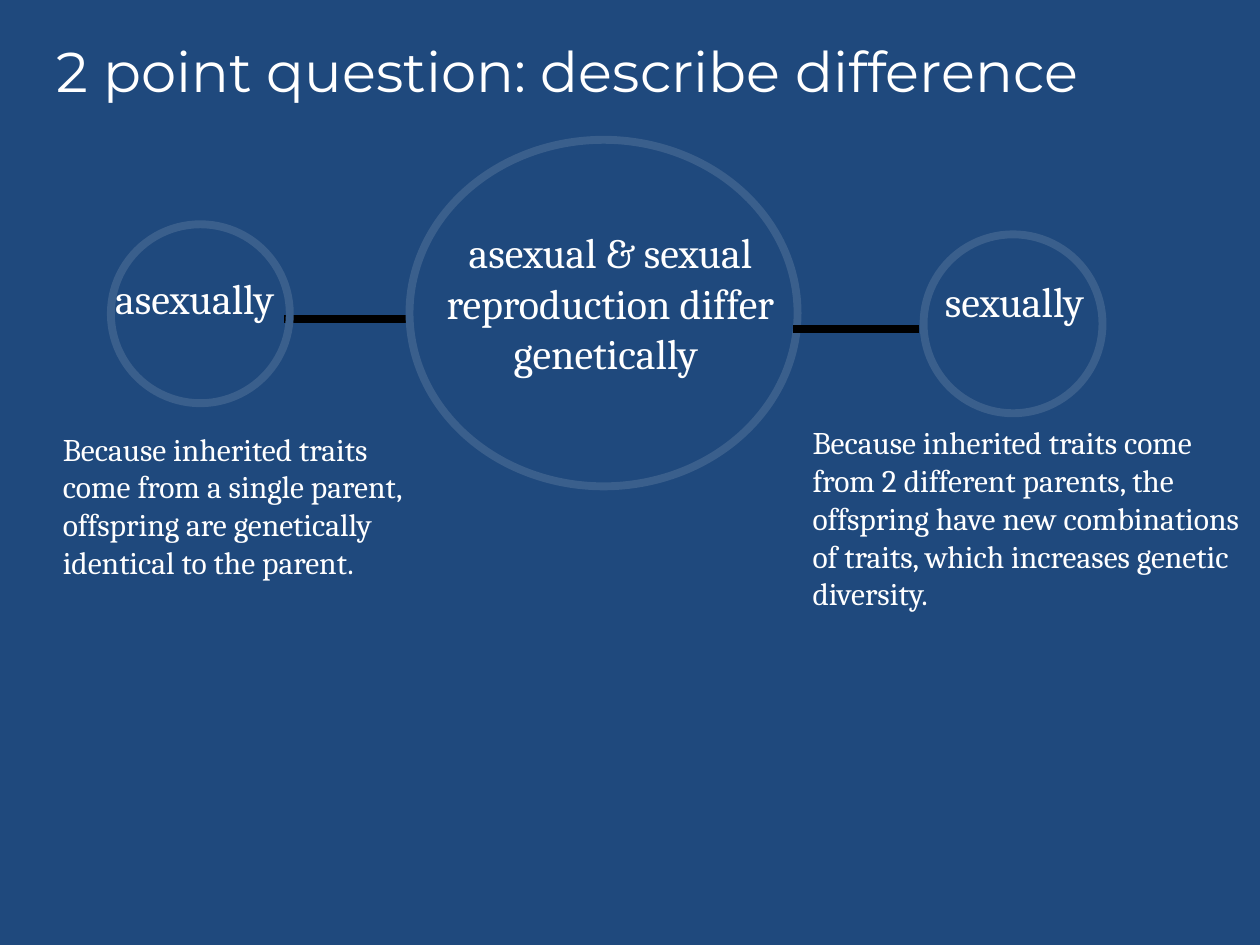
from lxml.etree import SubElement
from pptx import Presentation
from pptx.dml.color import RGBColor
from pptx.enum.shapes import MSO_CONNECTOR, MSO_SHAPE
from pptx.enum.text import MSO_ANCHOR, MSO_AUTO_SIZE, PP_ALIGN
from pptx.oxml.ns import qn
from pptx.util import Inches, Pt

NAVY, STEEL, WHITE, BLACK = "1F497D", "3A5F8C", "FFFFFF", "000000"
RING = 1.42  # diameter of the small circles


def paint(color, code):
    color.rgb = RGBColor.from_string(code)


def place(shape, box):
    shape.left, shape.top, shape.width, shape.height = map(Inches, box)


def write(shape, text, size, font="Cambria", align=PP_ALIGN.LEFT, wrap=True):
    frame = shape.text_frame
    frame.word_wrap = wrap
    frame.auto_size = MSO_AUTO_SIZE.SHAPE_TO_FIT_TEXT
    frame.vertical_anchor = MSO_ANCHOR.TOP
    para = frame.paragraphs[0]
    para.alignment = align
    run = para.add_run()
    run.text = text
    run.font.size = Pt(size)
    run.font.name = font
    paint(run.font.color, WHITE)


def add_title(slide, box, text):
    title = slide.shapes.title
    place(title, box)
    write(title, text, 32, "Montserrat", wrap=False)


def add_text(slide, box, text, size, **style):
    write(slide.shapes.add_textbox(*map(Inches, box)), text, size, **style)


def add_ring(slide, box):
    ring = slide.shapes.add_shape(MSO_SHAPE.OVAL, *map(Inches, box))
    ring.shadow.inherit = False
    ring.fill.background()
    paint(ring.line.color, STEEL)
    ring.line.width = Pt(4.5)


def add_link(slide, left, top):
    # One inch long, drawn from right to left
    ends = map(Inches, (left + 1, top, left, top))
    link = slide.shapes.add_connector(MSO_CONNECTOR.STRAIGHT, *ends)
    paint(link.line.color, BLACK)
    link.line.width = Pt(4.5)
    SubElement(link._element.spPr, qn("a:effectLst"))


def add_branch(slide, ring, label, name, note, reason):
    add_ring(slide, (*ring, RING, RING))
    add_text(slide, label, name, 24, align=PP_ALIGN.CENTER, wrap=False)
    add_text(slide, note, reason, 18)


def add_hub(slide, box, label, text):
    add_ring(slide, box)
    add_text(slide, label, text, 24, align=PP_ALIGN.CENTER)


def main():
    deck = Presentation()
    deck.slide_width, deck.slide_height = Inches(10), Inches(7.5)
    slide = deck.slides.add_slide(deck.slide_layouts[5])
    slide.background.fill.solid()
    paint(slide.background.fill.fore_color, NAVY)

    add_title(slide, (0.35, 0.24, 9.25, 0.64),
              "2 point question: describe difference")

    # Left branch, its link tucked under the circles
    add_link(slide, 2.25, 2.53)
    add_branch(slide, (0.88, 1.78), (0.81, 2.11, 1.47, 0.51), "asexually",
               (0.4, 3.36, 2.97, 1.31),
               "Because inherited traits come from a single parent, "
               "offspring are genetically identical to the parent.")

    # Right branch
    add_branch(slide, (7.33, 1.86), (7.39, 2.14, 1.32, 0.51), "sexually",
               (6.35, 3.31, 3.65, 1.62),
               "Because inherited traits come from 2 different parents, "
               "the offspring have new combinations of traits, which "
               "increases genetic diversity.")

    # Central idea, with the right link over its edge
    add_hub(slide, (3.25, 1.11, 3.08, 2.75), (3.36, 1.75, 2.97, 1.31),
            "asexual & sexual reproduction differ genetically ")
    add_link(slide, 6.29, 2.61)

    deck.save("out.pptx")


if __name__ == "__main__":
    main()
